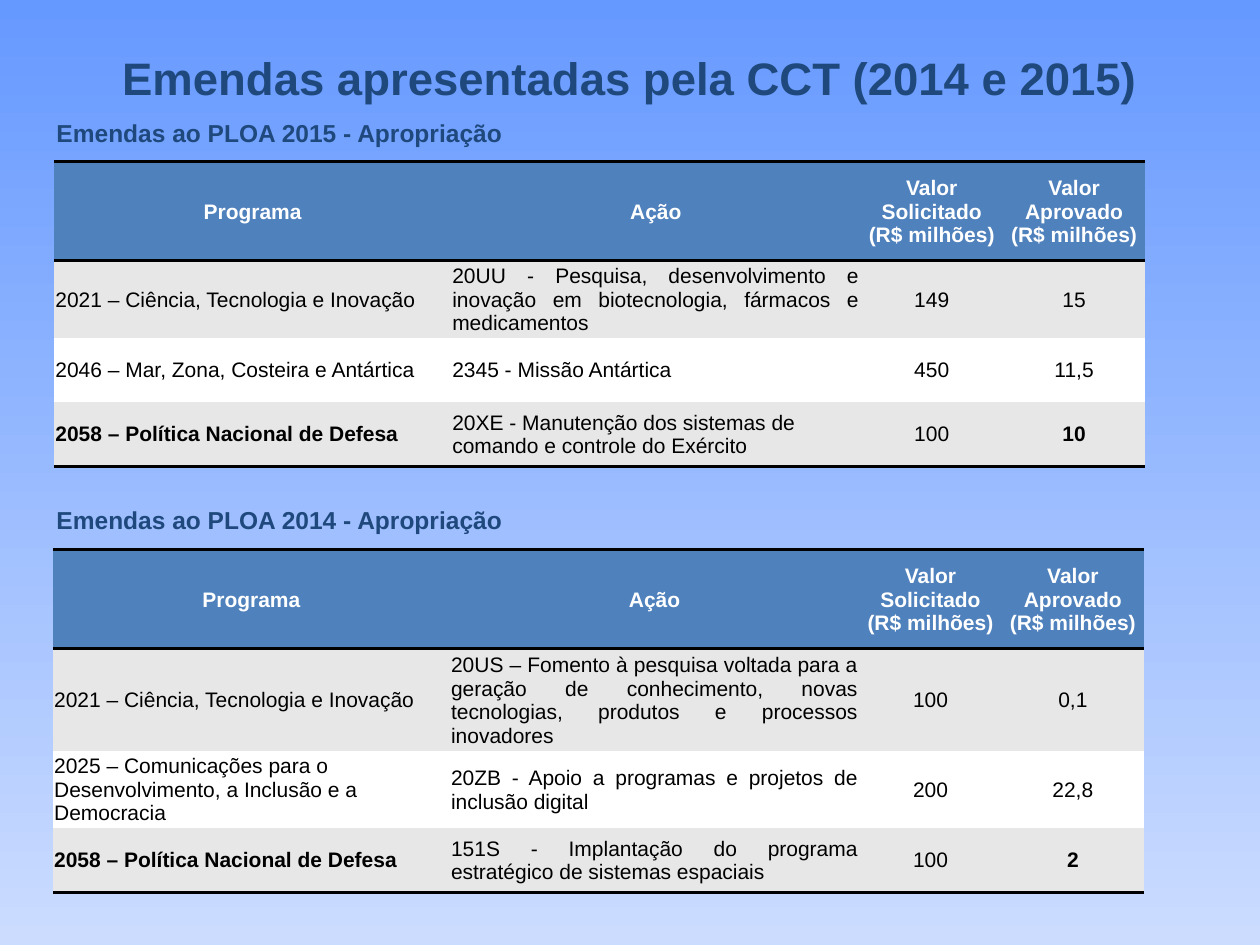
import pptx
import pptx.dml.color
import pptx.enum.text
import pptx.oxml
import pptx.oxml.ns
import pptx.util

Inches, Pt = pptx.util.Inches, pptx.util.Pt
ALIGN = pptx.enum.text.PP_ALIGN
ANCHOR = pptx.enum.text.MSO_ANCHOR
FIT = pptx.enum.text.MSO_AUTO_SIZE
LEFT, MID, JUST = ALIGN.LEFT, ALIGN.CENTER, ALIGN.JUSTIFY

# Content
NAVY, BLUE, GREY, WHITE, BLACK = "1F497D", "4F81BD", "E7E7E7", "FFFFFF", "000000"
TITLE = "Emendas apresentadas pela CCT (2014 e 2015)"
HEAD = ("Programa", "Ação", "Valor Solicitado\v(R$ milhões)",
        "Valor Aprovado\v(R$ milhões)")
COLS = (3.15, 3.25, 1.13, 1.13)
NO_STYLE = "{2D5ABB26-0587-4C30-8999-92F81FD0307C}"

# Each row: cell texts, alignment of the first two cells, bold ends or not
YEARS = [
    dict(name="Emendas ao PLOA 2015 - Apropriação", width=3.76, left=0.43, top=1.28,
         label=0.89, heights=(0.79, 0.6, 0.51, 0.51), rows=[
             (("2021 – Ciência, Tecnologia e Inovação",
               "20UU - Pesquisa, desenvolvimento e inovação em biotecnologia, "
               "fármacos e medicamentos", "149", "15"), (JUST, JUST), False),
             (("2046 – Mar, Zona, Costeira e Antártica",
               "2345 - Missão Antártica", "450", "11,5"), (LEFT, LEFT), False),
             (("2058 – Política Nacional de Defesa",
               "20XE - Manutenção dos sistemas de comando e controle do Exército",
               "100", "10"), (LEFT, LEFT), True)]),
    dict(name="Emendas ao PLOA 2014 - Apropriação", width=3.87, left=0.42, top=4.36,
         label=3.96, heights=(0.79, 0.81, 0.61, 0.51), rows=[
             (("2021 – Ciência, Tecnologia e Inovação",
               "20US – Fomento à pesquisa voltada para a geração de conhecimento, "
               "novas tecnologias, produtos e processos inovadores",
               "100", "0,1"), (JUST, JUST), False),
             (("2025 – Comunicações para o Desenvolvimento, a Inclusão e a Democracia",
               "20ZB - Apoio a programas e projetos de inclusão digital",
               "200", "22,8"), (LEFT, JUST), False),
             (("2058 – Política Nacional de Defesa",
               "151S - Implantação do programa estratégico de sistemas espaciais",
               "100", "2"), (LEFT, JUST), True)]),
]


def color(code):
    return pptx.dml.color.RGBColor.from_string(code)


def write(frame, text, size, code, bold, align):
    frame.text = text
    para = frame.paragraphs[0]
    para.alignment = align
    font = para.font
    font.name, font.size, font.bold = "Arial", Pt(size), bold
    font.color.rgb = color(code)


def label(slide, box, text, size, align=LEFT, anchor=ANCHOR.TOP, wrap=False):
    frame = slide.shapes.add_textbox(*map(Inches, box)).text_frame
    frame.word_wrap, frame.vertical_anchor = wrap, anchor
    frame.auto_size = FIT.SHAPE_TO_FIT_TEXT
    write(frame, text, size, NAVY, True, align)


def border(cell, sides):
    props = cell._tc.get_or_add_tcPr()
    for spot, side in enumerate(sides):
        props.insert(spot, pptx.oxml.parse_xml(
            f'<a:ln{side} {pptx.oxml.ns.nsdecls("a")} w="{Pt(2)}"><a:solidFill>'
            f'<a:srgbClr val="{BLACK}"/></a:solidFill></a:ln{side}>'))


def grid(slide, year):
    rows = [(HEAD, (MID, MID), True)] + year["rows"]
    highs = year["heights"]
    frame = slide.shapes.add_table(
        len(rows), len(COLS), Inches(year["left"]), Inches(year["top"]),
        Inches(sum(COLS)), Inches(sum(highs)))
    table = frame.table
    table.first_row = table.horz_banding = False
    table._tbl.tblPr.find(pptx.oxml.ns.qn("a:tableStyleId")).text = NO_STYLE
    for col, wide in zip(table.columns, COLS):
        col.width = Inches(wide)
    for r, (texts, aligns, strong) in enumerate(rows):
        table.rows[r].height = Inches(highs[r])
        back = BLUE if r == 0 else GREY if r % 2 else WHITE
        sides = "TB" if r == 0 else "B" if r == len(rows) - 1 else ""
        for c, (text, align) in enumerate(zip(texts, aligns + (MID, MID))):
            cell = table.cell(r, c)
            cell.margin_left = cell.margin_right = cell.margin_top = Inches(0.01)
            cell.margin_bottom = 0
            cell.vertical_anchor = ANCHOR.MIDDLE
            cell.fill.solid()
            cell.fill.fore_color.rgb = color(back)
            border(cell, sides)
            bold = r == 0 or (strong and c in (0, len(COLS) - 1))
            write(cell.text_frame, text, 12, BLACK if r else WHITE, bold, align)


def main():
    deck = pptx.Presentation()
    deck.slide_width, deck.slide_height = Inches(10), Inches(7.5)
    slide = deck.slides.add_slide(deck.slide_layouts[6])

    # Background, from top to bottom
    fill = slide.background.fill
    fill.gradient()
    fill.gradient_angle = 270
    for stop, code in zip(fill.gradient_stops, ("6699FF", "CBDCFF")):
        stop.color.rgb = color(code)

    # Title, then one label and table per year
    label(slide, (0, 0.34, 10, 0.54), TITLE, 26, MID, ANCHOR.BOTTOM, True)
    for year in YEARS:
        grid(slide, year)
        label(slide, (0.35, year["label"], year["width"], 0.34), year["name"], 14)
    deck.save("out.pptx")


if __name__ == "__main__":
    main()
